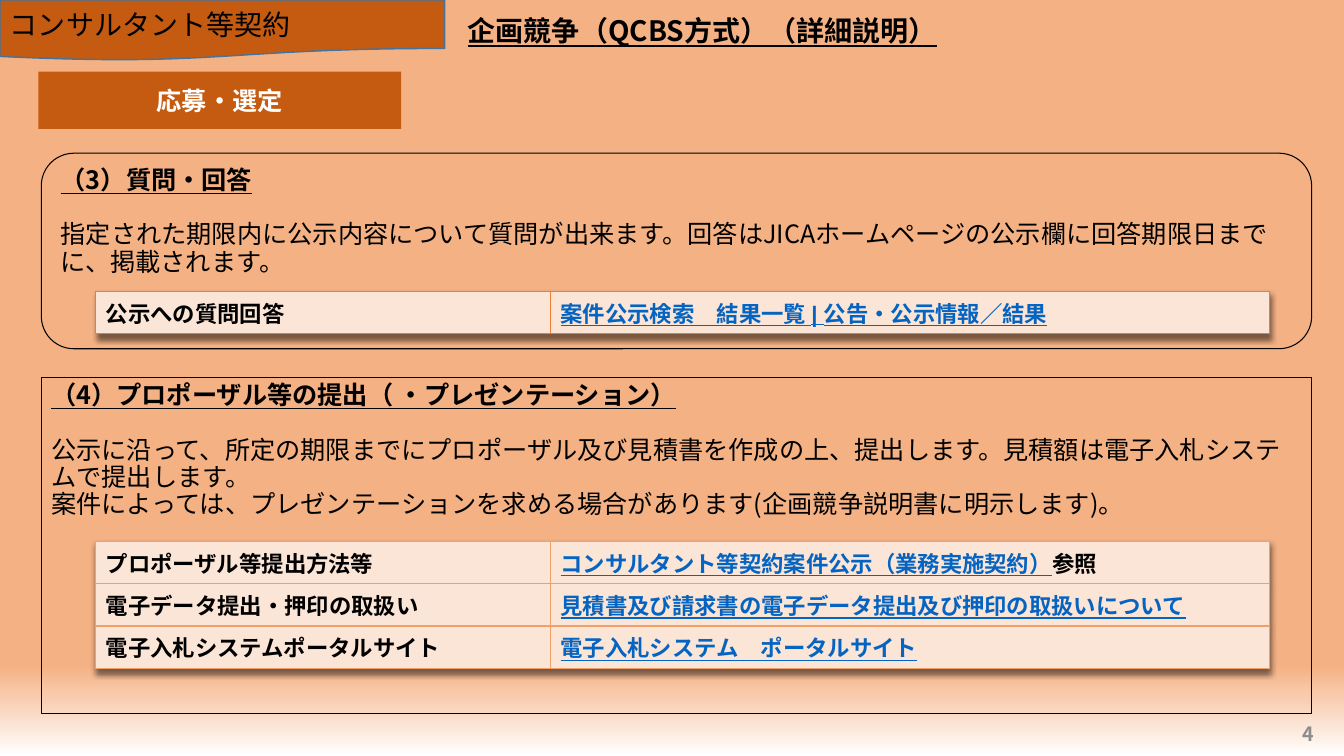
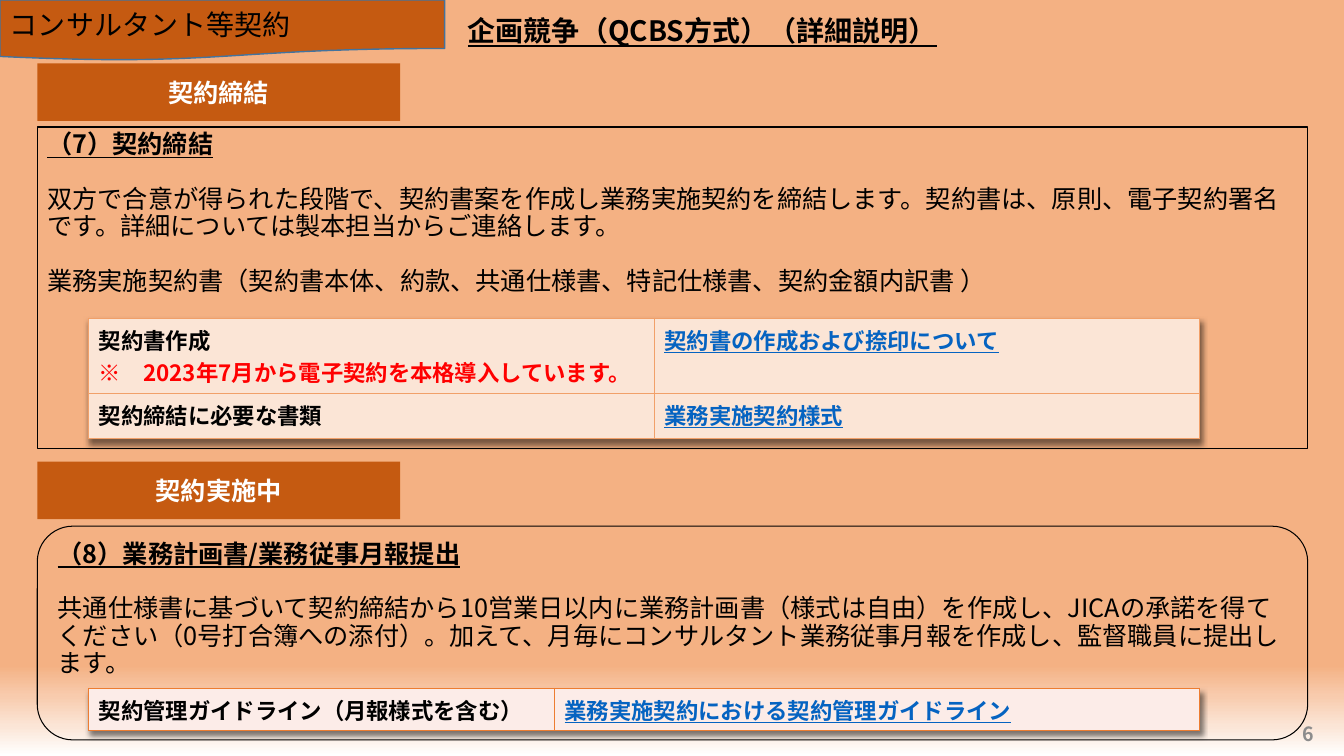
"""Build two slides on the QCBS selection procedure."""
from lxml import etree
from pptx import Presentation, oxml
from pptx import util as u
from pptx.dml.color import RGBColor
from pptx.enum import shapes, text
from pptx.oxml.ns import qn

HUES = {"dark": "C55A11", "edge": "43739E", "ink": "000000", "white": "FFFFFF",
        "grey": "8C8C8C", "link": "0563C1", "red": "FF0000", "pale": "FBE5D6",
        "rose": "FCECE8", "rule": "ED7D31", "soft": "F1A069"}
STOPS = [(88, "F4B183"), (92, "F8CBAD"), (96, "FBE5D6"), (100, "FFFFFF")]
NOTO, ARIAL = "Noto Sans CJK JP", "Arial"
BASE = {"size": u.Pt(18), "name": NOTO, "bold": False, "underline": False, "hue": "ink"}
CELL = {"size": u.Pt(16), "bold": True}
STYLES = {
    "title": {"size": u.Pt(20), "bold": True, "underline": True},
    "band": {"size": u.Pt(20)},
    "tag": {"bold": True, "hue": "white"},
    "page": {"size": u.Pt(14), "bold": True, "hue": "grey"},
    "head": {"bold": True, "underline": True},
    "body": {},
    "noto": CELL,
    "arial": {**CELL, "name": ARIAL},
    "red": {**CELL, "hue": "red"},
    "link": {**CELL, "hue": "link", "underline": True},
    "alink": {**CELL, "hue": "link", "underline": True, "name": ARIAL},
}
BAND = "コンサルタント等契約"
TITLE = "企画競争（QCBS方式）（詳細説明）"
GAP, PITCH = u.Pt(19.5), 0.9
ROUND, RECT = shapes.MSO_SHAPE.ROUNDED_RECTANGLE, shapes.MSO_SHAPE.RECTANGLE

SLIDES = [
    {"page": "4",
     "tags": [(0.38, 0.71, "応募・選定")],
     "boxes": [
         (ROUND, (0.41, 1.52, 12.6, 1.94), "（3）質問・回答",
          ["指定された期限内に公示内容について質問が出来ます。回答はJICAホームページの公示欄に回答期限日までに、掲載されます。"]),
         (RECT, (0.41, 3.75, 12.6, 3.33), "（4）プロポーザル等の提出（ ・プレゼンテーション）",
          ["公示に沿って、所定の期限までにプロポーザル及び見積書を作成の上、提出します。見積額は電子入札システムで提出します。\v"
           "案件によっては、プレゼンテーションを求める場合があります(企画競争説明書に明示します)。"])],
     "tables": [
         {"at": (0.95, 2.89), "cols": (4.51, 7.13), "rows": (0.42,), "fill": "pale", "rule": "rule",
          "cells": [([[("公示への質問回答", "arial")]],
                     [[("案件公示検索　結果一覧 | 公告・公示情報／結果", "alink")]])]},
         {"at": (0.95, 5.37), "cols": (4.51, 7.13), "rows": (0.42,) * 3, "fill": "pale", "rule": "soft",
          "cells": [([[("プロポーザル等提出方法等", "noto")]],
                     [[("コンサルタント等契約案件公示（業務実施契約）", "link"), ("参照", "noto")]]),
                    ([[("電子データ提出・押印の取扱い", "noto")]],
                     [[("見積書及び請求書の電子データ提出及び押印の取扱いについて", "link")]]),
                    ([[("電子入札システムポータルサイト", "arial")]],
                     [[("電子入札システム　ポータルサイト", "link")]])]}]},
    {"page": "6",
     "tags": [(0.37, 0.63, "契約締結"), (0.37, 4.58, "契約実施中")],
     "boxes": [
         (RECT, (0.37, 1.26, 12.6, 3.19), "（7）契約締結",
          ["双方で合意が得られた段階で、契約書案を作成し業務実施契約を締結します。契約書は、原則、電子契約署名です。詳細については製本担当からご連絡します。",
           "業務実施契約書（契約書本体、約款、共通仕様書、特記仕様書、契約金額内訳書 ）"]),
         (ROUND, (0.37, 5.22, 12.6, 2.12), "（8）業務計画書/業務従事月報提出",
          ["共通仕様書に基づいて契約締結から10営業日以内に業務計画書（様式は自由）を作成し、JICAの承諾を得てください（0号打合簿への添付）。"
           "加えて、月毎にコンサルタント業務従事月報を作成し、監督職員に提出します。"])],
     "tables": [
         {"at": (0.88, 3.16), "cols": (5.61, 5.41), "rows": (0.74, 0.45), "fill": "pale", "rule": "soft",
          "cells": [([[("契約書作成", "arial")],
                      [("※　2023年7月から電子契約を本格導入しています。", "red")]],
                     [[("契約書の作成および捺印について", "alink")]]),
                    ([[("契約締結に必要な書類", "arial")]],
                     [[("業務実施契約様式", "link")]])]},
         {"at": (0.88, 6.83), "cols": (4.62, 6.4), "rows": (0.42,), "fill": "rose", "rule": "rule",
          "cells": [([[("契約管理ガイドライン（月報様式を含む）", "arial")]],
                     [[("業務実施契約における契約管理ガイドライン", "alink")]])]}]},
]


def rgb(hue):
    return RGBColor.from_string(HUES[hue])


def xml(body):
    space = ' xmlns:a="http://schemas.openxmlformats.org/drawingml/2006/main">'
    return oxml.parse_xml(body.replace(">", space, 1))


def write(para, words, style):
    for at, part in enumerate(words.split("\v")):
        if at:
            para.add_line_break()
        run = para.add_run()
        run.text = part
        look = {**BASE, **STYLES[style]}
        run.font.color.rgb = rgb(look.pop("hue"))
        for key, value in look.items():
            setattr(run.font, key, value)
        etree.SubElement(run.font._element, qn("a:ea")).set("typeface", NOTO)


def fill_text(shape, lines, anchor="MIDDLE", align="LEFT", pitch=None):
    frame = shape.text_frame
    looks = {"word_wrap": True, "auto_size": text.MSO_AUTO_SIZE.NONE,
             "vertical_anchor": text.MSO_ANCHOR[anchor]}
    for key, value in looks.items():
        setattr(frame, key, value)
    for at, (words, style) in enumerate(lines):
        para = frame.add_paragraph() if at else frame.paragraphs[0]
        para.alignment = text.PP_ALIGN[align]
        if pitch:
            para.line_spacing = pitch
        if at:
            para.space_before = GAP
        write(para, words, style)


def add_block(slide, kind, at, fill=None, line=None, width=0.75):
    shape = slide.shapes.add_shape(kind, *map(u.Inches, at))
    shape.shadow.inherit = False
    if fill:
        shape.fill.solid()
        shape.fill.fore_color.rgb = rgb(fill)
    else:
        shape.fill.background()
    if line:
        shape.line.color.rgb = rgb(line)
        shape.line.width = u.Pt(width)
    else:
        shape.line.fill.background()
    return shape


def add_grid(slide, data):
    cols, rows = data["cols"], data["rows"]
    size = (*data["at"], sum(cols), sum(rows))
    table = slide.shapes.add_table(len(rows), len(cols), *map(u.Inches, size)).table
    table.first_row = table.horz_banding = False
    table._tbl.tblPr.insert(0, xml(
        '<a:effectLst><a:outerShdw blurRad="50800" dist="38100" dir="4800000" algn="ctr" rotWithShape="0">'
        '<a:srgbClr val="000000"><a:alpha val="50000"/></a:srgbClr></a:outerShdw></a:effectLst>'))
    for col, width in zip(table.columns, cols):
        col.width = u.Inches(width)
    for row, height, cells in zip(table.rows, rows, data["cells"]):
        row.height = u.Inches(height)
        for cell, paras in zip(row.cells, cells):
            cell.fill.solid()
            cell.fill.fore_color.rgb = rgb(data["fill"])
            for at, side in enumerate("LRTB"):
                cell._tc.get_or_add_tcPr().insert(at, xml(
                    f'<a:ln{side} w="12700"><a:solidFill><a:srgbClr val="{HUES[data["rule"]]}"/>'
                    f'</a:solidFill></a:ln{side}>'))
            frame = cell.text_frame
            for at, runs in enumerate(paras):
                para = frame.add_paragraph() if at else frame.paragraphs[0]
                for words, style in runs:
                    write(para, words, style)


def set_back(master):
    fill = master.background.fill
    fill.gradient()
    fill.gradient_angle = 270
    stops = next(master.element.cSld.iter(qn("a:gsLst")))
    for stop in list(stops):
        stops.remove(stop)
    for spot, hue in STOPS:
        stops.append(xml(f'<a:gs pos="{spot * 1000}"><a:srgbClr val="{hue}"/></a:gs>'))


def add_frame(slide, page):
    title = slide.shapes.title
    spots = zip(("left", "top", "width", "height"), (4.54, 0, 6.02, 0.65))
    for key, value in spots:
        setattr(title, key, u.Inches(value))
    fill_text(title, [(TITLE, "title")], pitch=PITCH)
    band = add_block(slide, shapes.MSO_SHAPE.FLOWCHART_DOCUMENT, (0, 0, 4.41, 0.6), "dark", "edge", 1)
    fill_text(band, [(BAND, "band")])
    foot = slide.shapes.add_textbox(*map(u.Inches, (10.13, 7.08, 3, 0.4)))
    fill_text(foot, [(page, "page")], align="RIGHT")


def main():
    deck = Presentation()
    deck.slide_width, deck.slide_height = u.Inches(13.33), u.Inches(7.5)
    set_back(deck.slide_master)
    for data in SLIDES:
        slide = deck.slides.add_slide(deck.slide_layouts[5])
        add_frame(slide, data["page"])
        for kind, at, head, body in data["boxes"]:
            box = add_block(slide, kind, at, line="ink")
            fill_text(box, [(head, "head"), *((words, "body") for words in body)], "TOP", pitch=PITCH)
        for left, top, words in data["tags"]:
            tag = add_block(slide, RECT, (left, top, 3.6, 0.57), "dark")
            fill_text(tag, [(words, "tag")], align="CENTER")
        for grid in data["tables"]:
            add_grid(slide, grid)
    deck.save("out.pptx")


if __name__ == "__main__":
    main()
